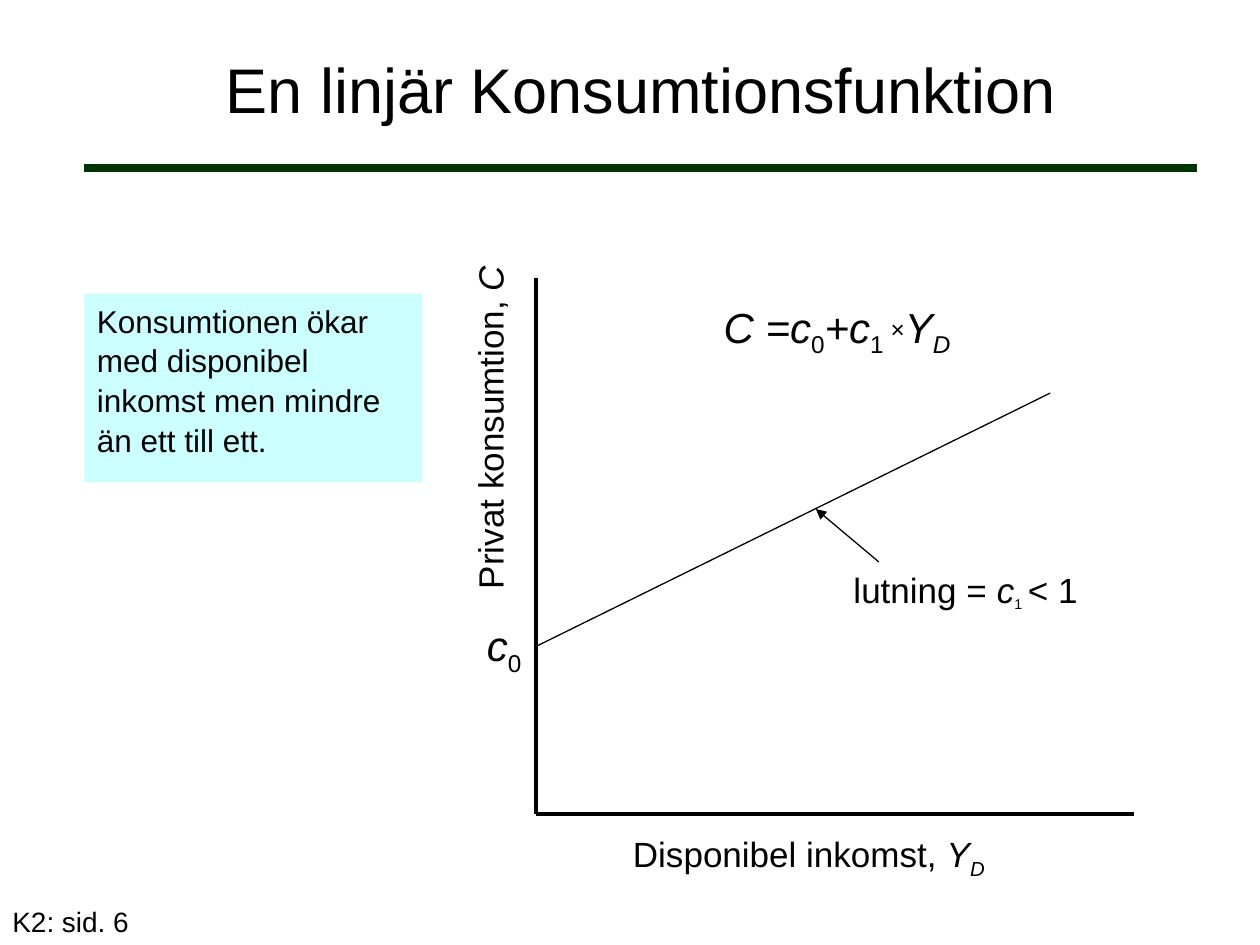
from dataclasses import dataclass

from lxml import etree
from pptx import Presentation
from pptx.dml.color import RGBColor
from pptx.enum.shapes import MSO_CONNECTOR, MSO_SHAPE
from pptx.enum.text import MSO_ANCHOR, MSO_AUTO_SIZE, PP_ALIGN
from pptx.oxml.ns import qn
from pptx.util import Inches, Pt

STRAIGHT = MSO_CONNECTOR.STRAIGHT
RECTANGLE = MSO_SHAPE.RECTANGLE
MIDDLE, TOP = MSO_ANCHOR.MIDDLE, MSO_ANCHOR.TOP
FIT_SHAPE, FIXED = MSO_AUTO_SIZE.SHAPE_TO_FIT_TEXT, MSO_AUTO_SIZE.NONE
CENTER, LEFT = PP_ALIGN.CENTER, PP_ALIGN.LEFT

COLUMNS, ROWS = 20, 15
CELL = Inches(0.5)


@dataclass(frozen=True)
class Theme:
    """Colours, type sizes and line widths of the slide."""
    font: str = "Arial"
    ink: RGBColor = RGBColor(0, 0, 0)
    rule: RGBColor = RGBColor(0x00, 0x33, 0x00)
    note: RGBColor = RGBColor(0xCC, 0xFF, 0xFF)
    title_size: float = 36
    formula_size: float = 24
    label_size: float = 20
    note_size: float = 18
    source_size: float = 16
    index_size: float = 14
    rule_width: float = 4.5
    axis_width: float = 2
    thin_width: float = 0.75


@dataclass(frozen=True)
class Box:
    """A region measured in grid columns and rows."""
    left: float
    top: float
    width: float
    height: float

    def inside(self, left, top, width, height):
        """Return a box placed relative to this one."""
        return Box(self.left + left, self.top + top, width, height)

    def lengths(self):
        """Return left, top, width and height as slide lengths."""
        return [round(value * CELL) for value in (self.left, self.top, self.width, self.height)]


@dataclass(frozen=True)
class Part:
    """A stretch of text with its own style."""
    text: str
    italic: bool = False
    baseline: int = 0
    size: float = 0


THEME = Theme()


def italic(text, baseline=0):
    """Return an italic part."""
    return Part(text, True, baseline)


def index(text, size=0):
    """Return an upright subscript part."""
    return Part(text, False, -25, size)


def write(text_frame, parts, size, align=LEFT):
    """Fill a text frame with one paragraph of styled parts."""
    paragraph = text_frame.paragraphs[0]
    paragraph.alignment = align
    for part in parts:
        run = paragraph.add_run()
        run.text = part.text
        run.font.name = THEME.font
        run.font.size = Pt(part.size or size)
        run.font.color.rgb = THEME.ink
        run.font.italic = part.italic
        if part.baseline:
            run.font._element.set("baseline", str(part.baseline * 1000))
    return paragraph


def add_line(slide, box, start, end, width, color=THEME.ink, arrow=False):
    """Draw a straight line between two points relative to a box."""
    points = [round(value * CELL) for x, y in (start, end) for value in (box.left + x, box.top + y)]
    connector = slide.shapes.add_connector(STRAIGHT, *points)
    connector.line.color.rgb = color
    connector.line.width = Pt(width)
    if arrow:
        outline = connector.line._get_or_add_ln()
        etree.SubElement(outline, qn("a:tailEnd"), type="triangle")
    etree.SubElement(connector._element.spPr, qn("a:effectLst"))


def add_label(slide, box, parts, size, rotation=0):
    """Add a one-line label that grows with its text."""
    label = slide.shapes.add_textbox(*box.lengths())
    label.rotation = rotation
    label.text_frame.word_wrap = False
    label.text_frame.auto_size = FIT_SHAPE
    write(label.text_frame, parts, size)


def add_heading(slide, box):
    """Place the title with the rule beneath it."""
    add_line(slide, box, (0, box.height), (box.width, box.height), THEME.rule_width, THEME.rule)
    title = slide.shapes.title
    title.left, title.top, title.width, title.height = box.lengths()
    title.text_frame.vertical_anchor = MIDDLE
    title.text_frame.auto_size = FIXED
    write(title.text_frame, [Part("En linjär Konsumtionsfunktion")], THEME.title_size, CENTER)


def add_note(slide, box):
    """Place the tinted explanation."""
    note = slide.shapes.add_shape(RECTANGLE, *box.lengths())
    note.shadow.inherit = False
    note.fill.solid()
    note.fill.fore_color.rgb = THEME.note
    note.line.fill.background()
    note.text_frame.word_wrap = True
    note.text_frame.vertical_anchor = TOP
    text = "Konsumtionen ökar med disponibel inkomst men mindre än ett till ett."
    paragraph = write(note.text_frame, [Part(text)], THEME.note_size)
    paragraph.space_before = paragraph.space_after = Pt(2.5)
    paragraph.line_spacing = 1.05


def add_diagram(slide, box):
    """Draw the axes, the consumption line and their labels."""
    origin = (0, box.height)
    add_line(slide, box, (0, 0), origin, THEME.axis_width)
    add_line(slide, box, origin, (box.width, box.height), THEME.axis_width)
    add_line(slide, box, (0, 5.84), (8.16, 1.82), THEME.thin_width)
    add_line(slide, box, (5.44, 4.5), (4.44, 3.66), THEME.thin_width, arrow=True)

    slope = [Part("lutning = "), italic("c"), index("1", THEME.index_size), index(" "), Part("< 1")]
    formula = [italic("C =c"), index("0"), italic("+c"), index("1 "),
               Part("×", baseline=10), italic("Y"), italic("D", -25)]
    intercept = [italic("c"), index("0")]
    consumption = [Part("Privat konsumtion, "), italic("C")]
    income = [Part("Disponibel inkomst, "), italic("Y"), italic("D", -25)]
    labels = [
        ((4.84, 4.5, 3.96, 0.88), slope, THEME.label_size, 0),
        ((2.78, 0.26, 4.18, 1), formula, THEME.formula_size, 0),
        ((-0.98, 5.32, 0.98, 1), intercept, THEME.formula_size, 0),
        ((-3.52, 1.9, 5.58, 0.88), consumption, THEME.label_size, 270),
        ((1.34, 8.7, 6.06, 0.88), income, THEME.label_size, 0),
    ]
    for place, parts, size, rotation in labels:
        add_label(slide, box.inside(*place), parts, size, rotation)


def add_source(slide, box):
    """Place the page reference."""
    source = slide.shapes.add_textbox(*box.lengths())
    source.text_frame.word_wrap = True
    write(source.text_frame, [Part("K2: sid. 6")], THEME.source_size)


def main():
    """Build and save the presentation."""
    presentation = Presentation()
    presentation.slide_width = COLUMNS * CELL
    presentation.slide_height = ROWS * CELL
    slide = presentation.slides.add_slide(presentation.slide_layouts[5])
    add_heading(slide, Box(1.34, 0.16, 17.66, 2.5))
    add_note(slide, Box(1.34, 4.66, 5.36, 3))
    add_diagram(slide, Box(8.51, 4.42, 9.49, 8.5))
    add_source(slide, Box(0, 14.26, 4.16, 0.74))
    presentation.save("out.pptx")


if __name__ == "__main__":
    main()
